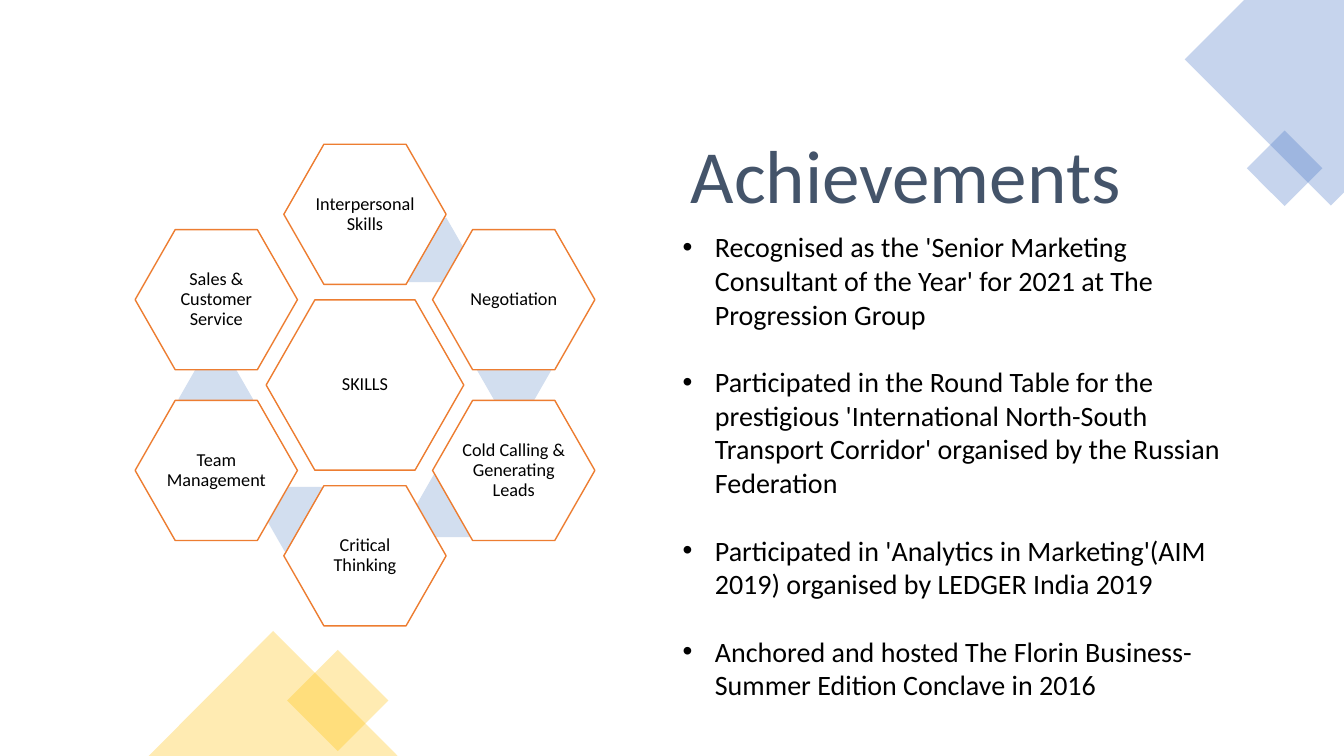
from lxml.etree import SubElement
from pptx import Presentation
from pptx.dml.color import RGBColor
from pptx.enum.shapes import MSO_SHAPE
from pptx.enum.text import MSO_ANCHOR, MSO_AUTO_SIZE, PP_ALIGN
from pptx.oxml.ns import qn
from pptx.util import Inches, Pt

TITLE = "Achievements"
ACHIEVEMENTS = [
    "Recognised as the 'Senior Marketing Consultant of the Year' for 2021 at The Progression Group",
    "Participated in the Round Table for the prestigious 'International North-South "
    "Transport Corridor' organised by the Russian Federation",
    "Participated in 'Analytics in Marketing'(AIM 2019) organised by LEDGER India 2019",
    "Anchored and hosted The Florin Business- Summer Edition Conclave in 2016",
]
HUB = "SKILLS"
# Skill with its column and row step from the hub
SKILLS = [
    ("Interpersonal Skills", 0, -2),
    ("Negotiation", 1, -1),
    ("Cold Calling & Generating Leads", 1, 1),
    ("Critical Thinking", 0, 2),
    ("Team Management", -1, 1),
    ("Sales & Customer Service", -1, -1),
]
# Centres of the pale links that show between neighbouring skills
LINKS = [(4.24, 2.48), (5.1, 3.67), (4.5, 5.01), (3.01, 5.15), (2.14, 3.96)]

FONT = "Calibri"
BLUE, GOLD, ORANGE, PALE = "4472C4", "FFC000", "ED7D31", "D2DEEF"
SLATE, BLACK, WHITE = "44546A", "000000", "FFFFFF"
HUB_X, HUB_Y = 3.62, 3.82
COLUMN_STEP, ROW_STEP = 1.475, 0.847
HUB_SIZE, SKILL_SIZE, LINK_SIZE = (1.96, 1.69), (1.61, 1.39), (0.74, 0.64)
CORNER = [(13.33, 0), (12.34, 0), (11.75, 0.59), (13.2, 2.04), (13.33, 1.91)]


def color(hex_code):
    return RGBColor.from_string(hex_code)


def paint(shape, fill, line=None, opacity=None):
    shape.shadow.inherit = False
    shape.fill.solid()
    shape.fill.fore_color.rgb = color(fill)
    if opacity:
        srgb = shape.fill._xPr.find(qn("a:solidFill")).find(qn("a:srgbClr"))
        SubElement(srgb, qn("a:alpha"), val=str(opacity * 1000))
    if line:
        shape.line.color.rgb = color(line)
        shape.line.width = Pt(1)
    else:
        shape.line.fill.background()


def add_centred(kind, x, y, size):
    width, height = size
    return slide.shapes.add_shape(
        kind, Inches(x - width / 2), Inches(y - height / 2), Inches(width), Inches(height))


def add_hexagon(x, y, size, fill, line=None, label=None):
    hexagon = add_centred(MSO_SHAPE.HEXAGON, x, y, size)
    hexagon.adjustments[0] = 0.286
    paint(hexagon, fill, line)
    if label:
        frame = hexagon.text_frame
        frame.word_wrap = True
        frame.vertical_anchor = MSO_ANCHOR.MIDDLE
        frame.margin_left = frame.margin_right = Inches(0.02)
        frame.margin_top = frame.margin_bottom = Inches(0.02)
        frame.text = label
        paragraph = frame.paragraphs[0]
        paragraph.alignment = PP_ALIGN.CENTER
        paragraph.line_spacing = 0.9
        set_font(paragraph, 13, BLACK)


def add_tilted_square(x, y, side, fill):
    square = add_centred(MSO_SHAPE.RECTANGLE, x, y, (side, side))
    square.rotation = 45
    paint(square, fill, opacity=30)


def set_font(paragraph, size, hex_code):
    paragraph.font.name = FONT
    paragraph.font.size = Pt(size)
    paragraph.font.color.rgb = color(hex_code)


def place(placeholder, left, top, width, height):
    placeholder.left, placeholder.top = Inches(left), Inches(top)
    placeholder.width, placeholder.height = Inches(width), Inches(height)
    frame = placeholder.text_frame
    frame.word_wrap = True
    frame.auto_size = MSO_AUTO_SIZE.NONE
    frame.vertical_anchor = MSO_ANCHOR.TOP
    return frame


prs = Presentation()
prs.slide_width, prs.slide_height = Inches(13.33), Inches(7.5)
slide = prs.slides.add_slide(prs.slide_layouts[1])

# Corner decoration
points = [(Inches(x), Inches(y)) for x, y in CORNER]
builder = slide.shapes.build_freeform(*points[0])
builder.add_line_segments(points[1:], close=True)
paint(builder.convert_to_shape(), BLUE, opacity=30)
add_tilted_square(12.74, 1.67, 0.53, BLUE)
add_tilted_square(3.35, 6.95, 0.71, GOLD)
peak = add_centred(MSO_SHAPE.ISOSCELES_TRIANGLE, 2.71, 6.88, (2.47, 1.24))
paint(peak, GOLD, opacity=30)

# Achievements
title = place(slide.shapes.title, 6.75, 1.22, 5.88, 0.93)
title.text = TITLE
title.paragraphs[0].alignment = PP_ALIGN.LEFT
set_font(title.paragraphs[0], 53.6, SLATE)

body = place(slide.placeholders[1], 6.67, 2.23, 5.88, 4.18)
body.text = "\n".join(ACHIEVEMENTS)
for index, paragraph in enumerate(body.paragraphs):
    set_font(paragraph, 20, BLACK)
    paragraph.space_before = Pt(24.3 if index else 0)
    properties = paragraph._p.get_or_add_pPr()
    properties.set("marL", str(Inches(0.32)))
    properties.set("indent", str(-Inches(0.32)))

# Skills ring
for x, y in LINKS:
    add_hexagon(x, y, LINK_SIZE, PALE)
add_hexagon(HUB_X, HUB_Y, HUB_SIZE, WHITE, ORANGE, HUB)
for skill, column, row in SKILLS:
    add_hexagon(HUB_X + column * COLUMN_STEP, HUB_Y + row * ROW_STEP,
                SKILL_SIZE, WHITE, ORANGE, skill)

prs.save("out.pptx")
